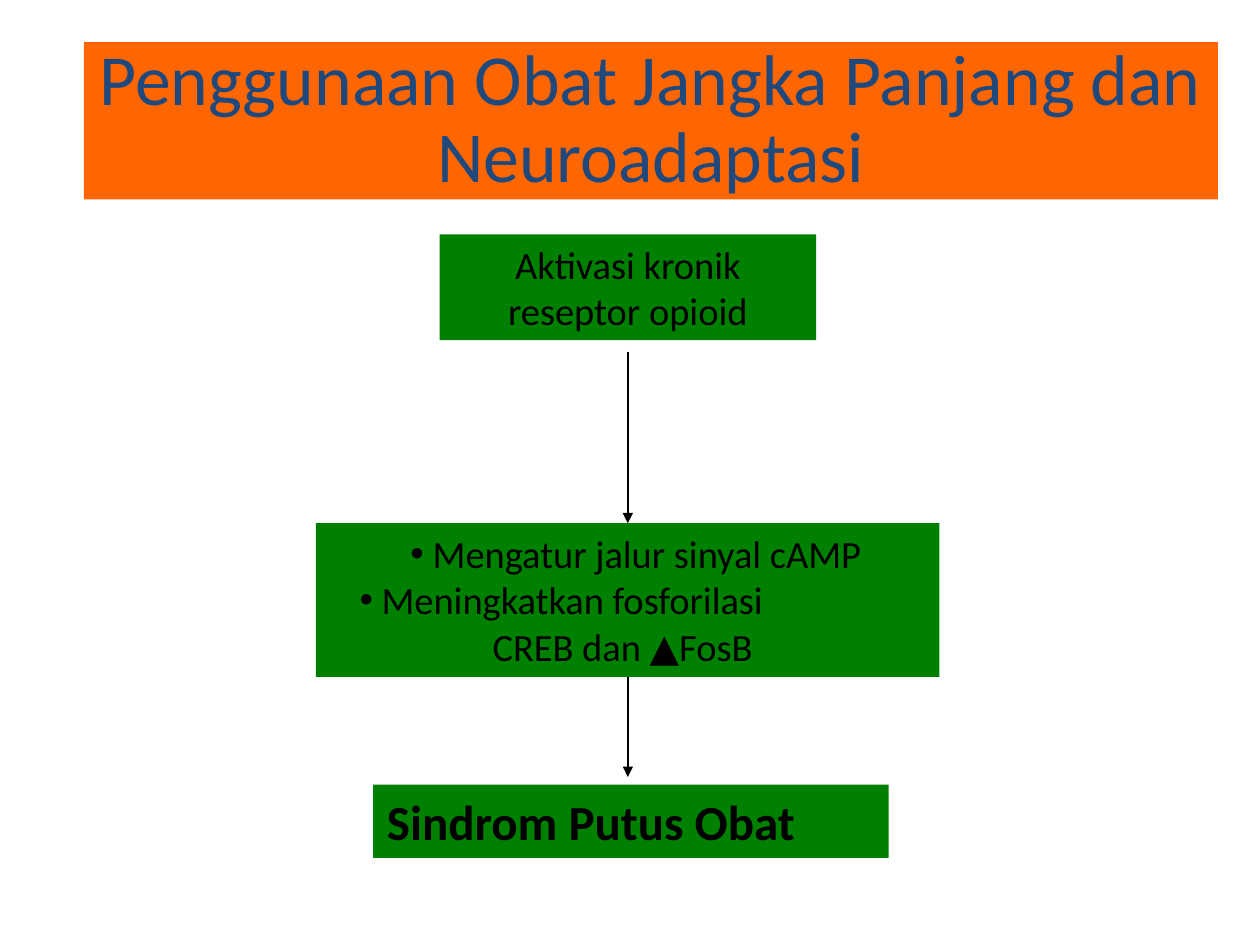
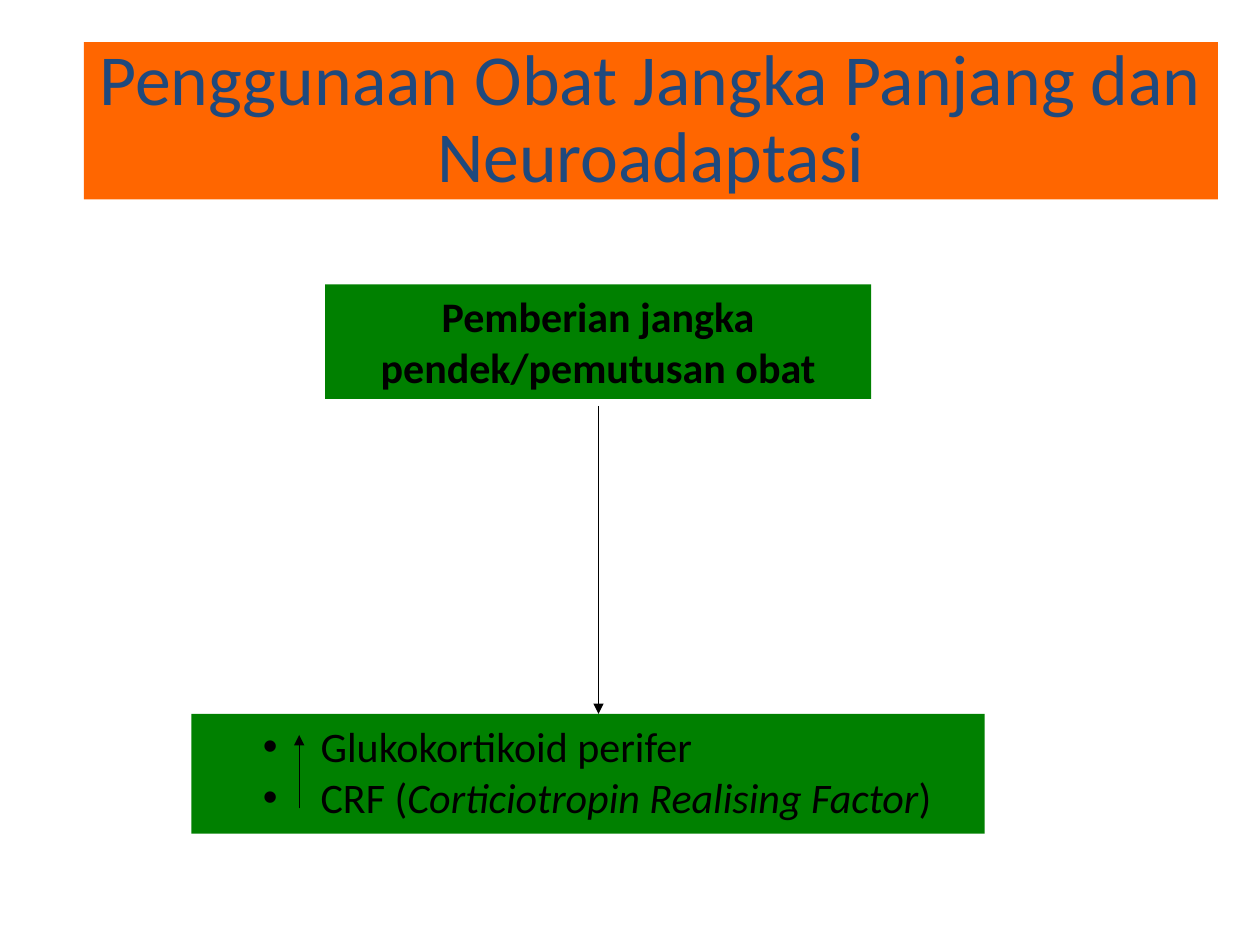
"""Build two flow-diagram slides on long-term drug use and neuroadaptation."""
from dataclasses import dataclass

from lxml import etree
from pptx import Presentation
from pptx import util as u
from pptx.dml import color
from pptx.enum import shapes, text
from pptx.oxml import ns

COLOURS = {"band": "FF6600", "title": "1F497D", "box": "008000", "ink": "000000"}
FONT = "Calibri"
TITLE = "Penggunaan Obat Jangka Panjang dan Neuroadaptasi"
TITLE_AREA = (48, 24, 648, 90)
LEFT, CENTER = text.PP_ALIGN.LEFT, text.PP_ALIGN.CENTER


@dataclass(frozen=True)
class Line:
    """A paragraph of (words, italic) runs with its indents in points."""
    runs: tuple[tuple[str, bool], ...]
    align: text.PP_ALIGN = LEFT
    bullet_at: float | None = None
    text_at: float = 0


@dataclass(frozen=True)
class Box:
    """A filled step of the flow."""
    area: tuple[float, float, float, float]
    lines: tuple[Line, ...]
    size: float
    bold: bool = False
    inset: tuple[float, float] = (7.2, 3.6)


@dataclass(frozen=True)
class Arrow:
    """An arrow from one point to another."""
    start: tuple[float, float]
    end: tuple[float, float]


WIDE_INSET = (7.92, 4)
SLIDES = (
    (
        Box((251.2, 134, 215.2, 60.4),
            (Line((("Aktivasi kronik reseptor opioid", False),), CENTER),), 22),
        Box((180.6, 299, 356.2, 87.8), (
            Line((("Mengatur jalur sinyal cAMP", False),), LEFT, 46, 58.8),
            Line((("Meningkatkan fosforilasi", False),), LEFT, 17, 29.6),
            Line((("CREB dan ▲FosB", False),), text_at=93),
        ), 22, inset=WIDE_INSET),
        Arrow((358.8, 201), (358.8, 299)),
        Box((213.2, 448.4, 294.6, 41.8),
            (Line((("Sindrom Putus Obat", False),)),), 28, True, WIDE_INSET),
        Arrow((358.8, 386.8), (358.8, 444)),
    ),
    (
        Box((185.8, 162.5, 312, 65.5),
            (Line((("Pemberian jangka pendek/pemutusan obat", False),), CENTER),), 24, True),
        Box((109.3, 408, 453.4, 68.4), (
            Line((("Glukokortikoid perifer", False),), LEFT, 33, 66),
            Line((("CRF (", False), ("Corticiotropin Realising Factor", True), (")", False)),
                 LEFT, 33, 66),
        ), 24, inset=WIDE_INSET),
        Arrow((171, 462), (171, 420)),
        Arrow((342, 232), (342, 408)),
    ),
)


def rgb(name: str) -> color.RGBColor:
    """Return a named colour."""
    return color.RGBColor.from_string(COLOURS[name])


def write(paragraph, words: str, *, size: float, ink: str = "ink",
          bold: bool = False, italic: bool = False) -> None:
    """Add a formatted run to a paragraph."""
    run = paragraph.add_run()
    run.text = words
    font = run.font
    font.name, font.size, font.bold, font.italic = FONT, u.Pt(size), bold, italic
    font.color.rgb = rgb(ink)


def set_frame(frame, anchor: text.MSO_ANCHOR, inset: tuple[float, float]) -> None:
    """Give a text frame its wrapping, anchor and margins."""
    frame.word_wrap = True
    frame.auto_size = text.MSO_AUTO_SIZE.NONE
    frame.vertical_anchor = anchor
    frame.margin_left = frame.margin_right = u.Pt(inset[0])
    frame.margin_top = frame.margin_bottom = u.Pt(inset[1])


def set_indents(paragraph, line: Line) -> None:
    """Apply the left indent and, if any, the hanging bullet of a line."""
    properties = paragraph._p.get_or_add_pPr()
    hanging = 0 if line.bullet_at is None else line.bullet_at - line.text_at
    properties.set("marL", str(int(u.Pt(line.text_at))))
    properties.set("indent", str(int(u.Pt(hanging))))
    if line.bullet_at is not None:
        etree.SubElement(properties, ns.qn("a:buFont"), typeface="Arial")
        etree.SubElement(properties, ns.qn("a:buChar"), char="•")


def draw_title(slide) -> None:
    """Place and format the title band."""
    title = slide.shapes.title
    title.left, title.top, title.width, title.height = map(u.Pt, TITLE_AREA)
    title.fill.solid()
    title.fill.fore_color.rgb = rgb("band")
    set_frame(title.text_frame, text.MSO_ANCHOR.MIDDLE, (7.2, 0))
    paragraph = title.text_frame.paragraphs[0]
    paragraph.alignment = CENTER
    paragraph.line_spacing = 0.9
    write(paragraph, TITLE, size=41, ink="title")


def draw_box(slide, box: Box) -> None:
    """Draw a filled step with its text."""
    shape = slide.shapes.add_shape(shapes.MSO_SHAPE.RECTANGLE, *map(u.Pt, box.area))
    shape.shadow.inherit = False
    shape.fill.solid()
    shape.fill.fore_color.rgb = rgb("box")
    shape.line.fill.background()
    frame = shape.text_frame
    set_frame(frame, text.MSO_ANCHOR.TOP, box.inset)
    for index, line in enumerate(box.lines):
        paragraph = frame.add_paragraph() if index else frame.paragraphs[0]
        paragraph.alignment = line.align
        set_indents(paragraph, line)
        for words, italic in line.runs:
            write(paragraph, words, size=box.size, bold=box.bold, italic=italic)


def draw_arrow(slide, arrow: Arrow) -> None:
    """Draw a thin arrow with a triangular head."""
    connector = slide.shapes.add_connector(
        shapes.MSO_CONNECTOR.STRAIGHT, *map(u.Pt, arrow.start + arrow.end))
    connector.line.color.rgb = rgb("ink")
    connector.line.width = u.Pt(0.75)
    etree.SubElement(connector.line._get_or_add_ln(), ns.qn("a:tailEnd"), type="triangle")
    etree.SubElement(connector._element.spPr, ns.qn("a:effectLst"))


def main() -> None:
    """Build and save the presentation."""
    presentation = Presentation()
    presentation.slide_width, presentation.slide_height = u.Pt(720), u.Pt(540)
    for items in SLIDES:
        slide = presentation.slides.add_slide(presentation.slide_layouts.get_by_name("Title Only"))
        draw_title(slide)
        for item in items:
            if isinstance(item, Box):
                draw_box(slide, item)
            else:
                draw_arrow(slide, item)
    presentation.save("out.pptx")


if __name__ == "__main__":
    main()
